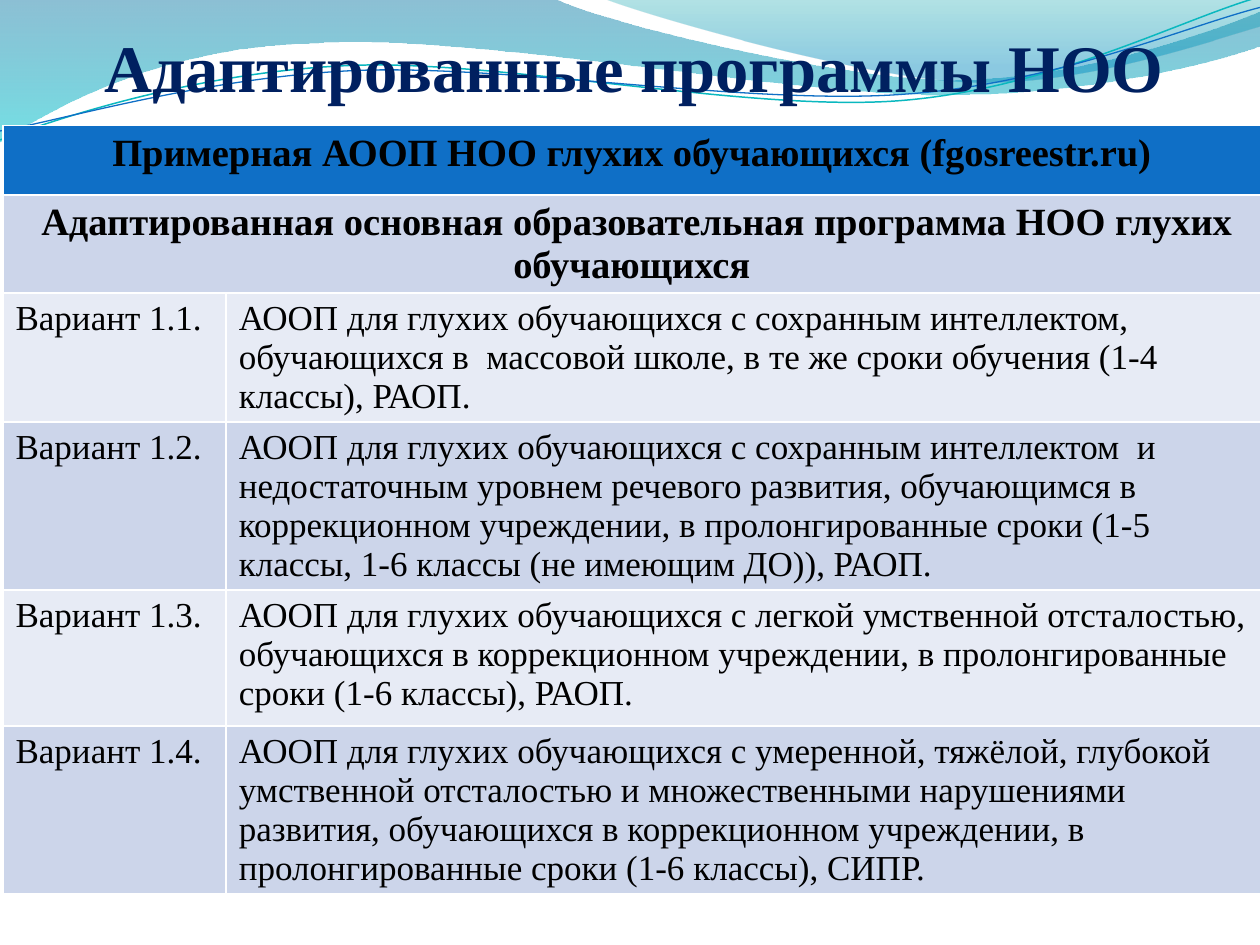
from math import cos, radians, sin

from lxml.etree import SubElement
from pptx import Presentation
from pptx.dml.color import RGBColor
from pptx.enum.text import MSO_ANCHOR, MSO_AUTO_SIZE, PP_ALIGN
from pptx.oxml.ns import qn
from pptx.util import Cm, Pt

FONT = "Times New Roman"
COLORS = {
    "title": "002060", "text": "000000",
    "header": "0F6FC6", "dark": "CCD5EA", "light": "E7EBF5",
    "blue": "0074A1", "cyan": "00C6CF", "teal": "00A1A9", "azure": "008BBF",
    "teal_line": "0AB8BF", "blue_line": "0F6FC6",
}


def color(key):
    return RGBColor.from_string(COLORS[key])


def add_run(paragraph, text, size, key, bold):
    run = paragraph.add_run()
    run.text = text
    run.font.name = FONT
    run.font.size = Pt(size)
    run.font.bold = bold
    run.font.color.rgb = color(key)


prs = Presentation()
prs.slide_width, prs.slide_height = Cm(25.4), Cm(19.05)
slide = prs.slides.add_slide(prs.slide_layouts[5])

# Each wave: start point, then one-point lines or three-point cubic curves, in cm
waves = [
    ((0, 0), [[(11.18, -0.03)],
              [(12.09, 0.43), (16.87, 1.6), (19.25, 1.6)],
              [(21.67, 1.6), (24.33, 0.66), (25.4, 0.23)],
              [(25.43, 0.91)],
              [(24.97, 1.12), (22.1, 1.93), (18.95, 1.91)],
              [(15.8, 1.91), (9.7, 0.71), (6.53, 0.86)],
              [(3.28, 0.91), (1.17, 2.11), (-0.03, 2.87)],
              [(0, 0)]],
     [("blue", 0, 45), ("cyan", 1, 55)], None, 0),
    ((12.17, -0.03), [[(12.93, 0.28), (17.32, 1.57), (19.53, 1.65)],
                      [(21.74, 1.75), (24.41, 0.81), (25.4, 0.53)],
                      [(25.4, 0)],
                      [(12.17, -0.03)]],
     [("teal", 0, 30), ("azure", 0.8, 45)], None, 0),
    ((0, 2.82), [[(1.22, 2.36), (4.01, 1.45), (7.04, 1.32)],
                 [(10.03, 1.19), (15.06, 2.26), (18.11, 2.03)],
                 [(21.16, 1.8), (23.83, 0.38), (25.35, -0.05)]],
     None, ("teal_line", 0.85), -2.7),
    ((0, 2.64), [[(1.19, 2.44), (4.17, 1.55), (7.19, 1.42)],
                 [(10.24, 1.3), (15.16, 2.13), (18.21, 1.9)],
                 [(21.23, 1.7), (23.9, 0.53), (25.4, 0.15)]],
     None, ("blue_line", 0.75), -2.7),
]
PIVOT_X, PIVOT_Y = 12.67, 1.46
for start, segments, gradient, stroke, tilt in waves:
    if tilt:
        c, s = cos(radians(-tilt)), sin(radians(-tilt))
        start, *segments = [
            [(PIVOT_X + (x - PIVOT_X) * c - (y - PIVOT_Y) * s,
              PIVOT_Y + (x - PIVOT_X) * s + (y - PIVOT_Y) * c) for x, y in segment]
            for segment in [[start], *segments]]
        start = start[0]
    builder = slide.shapes.build_freeform(Cm(start[0]), Cm(start[1]))
    builder.add_line_segments([(Cm(x), Cm(y)) for x, y in (segment[-1] for segment in segments)],
                              close=gradient is not None)
    wave = builder.convert_to_shape()
    for line, segment in zip(list(wave._element.iter(qn("a:lnTo"))), segments):
        if len(segment) == 3:
            curve = line.makeelement(qn("a:cubicBezTo"))
            for x, y in segment:
                SubElement(curve, qn("a:pt"), x=str(Cm(x) - wave.left), y=str(Cm(y) - wave.top))
            line.getparent().replace(line, curve)
    wave.rotation = tilt
    wave.shadow.inherit = False
    if gradient:
        wave.line.fill.background()
        wave.fill.gradient()
        wave.fill.gradient_angle = 270
        for stop, (key, position, _) in zip(wave.fill.gradient_stops, gradient):
            stop.color.rgb = color(key)
            stop.position = position
        for tint, (_, _, opacity) in zip(wave._element.iter(qn("a:srgbClr")), gradient):
            SubElement(tint, qn("a:alpha")).set("val", str(opacity * 1000))
    else:
        wave.fill.background()
        wave.line.color.rgb = color(stroke[0])
        wave.line.width = Pt(stroke[1])

title = slide.shapes.title
slide.shapes._spTree.append(title._element)
title.left, title.top, title.width, title.height = Cm(0.89), Cm(0.33), Cm(23.8), Cm(1.8)
heading = title.text_frame
heading.auto_size = MSO_AUTO_SIZE.NONE
heading.word_wrap = True
heading.vertical_anchor = MSO_ANCHOR.BOTTOM
heading.margin_left = heading.margin_right = heading.margin_bottom = 0
heading.margin_top = Cm(0.13)
heading.paragraphs[0].alignment = PP_ALIGN.CENTER
add_run(heading.paragraphs[0], "Адаптированные программы НОО", 38, "title", True)

headings = [
    ["Примерная АООП НОО глухих обучающихся (fgosreestr.ru)"],
    [" ", "Адаптированная основная образовательная программа НОО глухих обучающихся"],
]
variants = [
    ("Вариант 1.1.", "АООП для глухих обучающихся с сохранным интеллектом, обучающихся в  массовой "
     "школе, в те же сроки обучения (1-4 классы), РАОП."),
    ("Вариант 1.2.", "АООП для глухих обучающихся с сохранным интеллектом  и недостаточным уровнем "
     "речевого развития, обучающимся в коррекционном учреждении, в пролонгированные сроки "
     "(1-5 классы, 1-6 классы (не имеющим ДО)), РАОП."),
    ("Вариант 1.3.", "АООП для глухих обучающихся с легкой умственной отсталостью, обучающихся в "
     "коррекционном учреждении, в пролонгированные сроки (1-6 классы), РАОП."),
    ("Вариант 1.4.", "АООП для глухих обучающихся с умеренной, тяжёлой, глубокой умственной "
     "отсталостью и множественными нарушениями развития, обучающихся в коррекционном учреждении, "
     "в пролонгированные сроки (1-6 классы), СИПР."),
]
row_heights = [1.4, 1.4, 1.88, 2.74, 2.74, 2.74]
programs = slide.shapes.add_table(len(row_heights), 2, Cm(0.06), Cm(2.53),
                                  Cm(25.35), Cm(sum(row_heights))).table
for column, width in zip(programs.columns, (4.5, 20.85)):
    column.width = Cm(width)
for row, height in zip(programs.rows, row_heights):
    row.height = Cm(height)

for index, parts in enumerate(headings):
    programs.cell(index, 0).merge(programs.cell(index, 1))
    paragraph = programs.cell(index, 0).text_frame.paragraphs[0]
    paragraph.alignment = PP_ALIGN.CENTER
    for part in parts:
        add_run(paragraph, part, 22, "text", part != " ")
for index, texts in enumerate(variants, len(headings)):
    for column, text in enumerate(texts):
        add_run(programs.cell(index, column).text_frame.paragraphs[0], text, 20, "text", False)

for index in range(len(row_heights)):
    band = "header" if index == 0 else ("dark" if index % 2 else "light")
    for column in range(2):
        cell = programs.cell(index, column)
        cell.fill.solid()
        cell.fill.fore_color.rgb = color(band)

prs.save("out.pptx")
